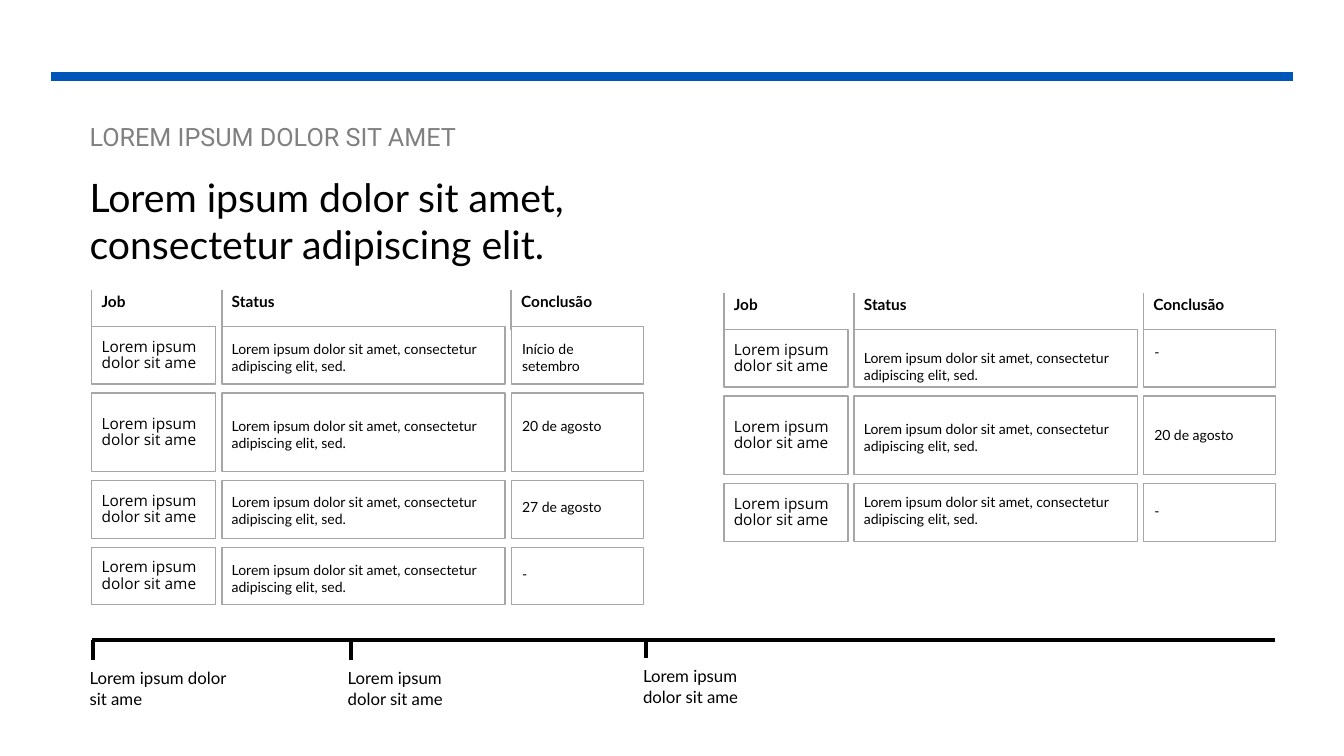
from lxml import etree
from pptx import Presentation
from pptx import util as u
from pptx.dml.color import RGBColor
from pptx.enum import shapes, text
from pptx.oxml import ns

BLUE = RGBColor(0x00, 0x55, 0xB8)
BLACK = RGBColor(0x00, 0x00, 0x00)
GRAY = RGBColor(0x80, 0x80, 0x80)
BORDER = RGBColor(0xA6, 0xA6, 0xA6)

JOB = "Lorem ipsum dolor sit ame"
STATUS = "Lorem ipsum dolor sit amet, consectetur adipiscing elit, sed."
COLUMNS = [("Job", 0, 1.23, 0.8), ("Status", 1.29, 2.81, 0.8), ("Conclusão", 4.16, 1.31, 1.01)]
ROW_GAP = 0.09
LEFT_ROWS = [
    (0.57, 0.09, "Início de setembro", 0.09),
    (0.78, 0.19, "20 de agosto", 0.19),
    (0.57, 0.08, "27 de agosto", 0.13),
    (0.57, 0.09, "-", 0.13),
]
RIGHT_ROWS = [
    (0.57, 0.15, "-", 0.09),
    (0.78, 0.19, "20 de agosto", 0.25),
    (0.57, 0.05, "-", 0.14),
]
MILESTONES = [(0.92, 6.35, 0.79, 1.68), (3.48, 6.35, 3.35, 1.45), (6.41, 6.33, 6.28, 1.36)]


class SlideBuilder:
    """Draws styled elements on the current slide."""

    formats = {
        "kicker": {"size": u.Pt(18), "name": "Roboto"},
        "title": {"size": u.Pt(28), "name": "Lato"},
        "header": {"size": u.Pt(11), "name": "Lato", "bold": True},
        "job": {"size": u.Pt(11), "name": "Open Sans"},
        "cell": {"size": u.Pt(10), "name": "Lato"},
        "milestone": {"size": u.Pt(12), "name": "Lato"},
    }

    def __init__(self, slide):
        self.slide = slide

    def fill_text(self, shape, words, style, color=BLACK):
        shape.text_frame.word_wrap = True
        paragraph = shape.text_frame.paragraphs[0]
        paragraph.text = words
        paragraph.alignment = text.PP_ALIGN.LEFT
        for name, value in self.formats[style].items():
            setattr(paragraph.font, name, value)
        paragraph.font.color.rgb = color
        return paragraph

    def label(self, left, top, width, height, words, style, color=BLACK):
        shape = self.slide.shapes.add_textbox(*map(u.Inches, (left, top, width, height)))
        self.fill_text(shape, words, style, color)
        shape.text_frame.auto_size = text.MSO_AUTO_SIZE.SHAPE_TO_FIT_TEXT

    def box(self, left, top, width, height, kind=shapes.MSO_SHAPE.RECTANGLE):
        shape = self.slide.shapes.add_shape(kind, *map(u.Inches, (left, top, width, height)))
        shape.shadow.inherit = False
        shape.fill.background()
        shape.line.color.rgb = BORDER
        shape.line.width = u.Pt(1)
        return shape

    def job_box(self, left, top, width, height):
        shape = self.box(left, top, width, height, shapes.MSO_SHAPE.ROUNDED_RECTANGLE)
        shape.adjustments[0] = 0
        shape.text_frame.vertical_anchor = text.MSO_ANCHOR.MIDDLE
        self.fill_text(shape, JOB, "job").line_spacing = 0.9

    def line(self, x1, y1, x2, y2, color, weight):
        connector = self.slide.shapes.add_connector(
            shapes.MSO_CONNECTOR.STRAIGHT, *map(u.Inches, (x1, y1, x2, y2)))
        connector.line.color.rgb = color
        connector.line.width = u.Pt(weight)
        etree.SubElement(connector._element.spPr, ns.qn("a:effectLst"))

    def job_grid(self, left, top, rows):
        for words, offset, _, width in COLUMNS:
            x = left + offset
            self.label(x, top, width, 0.29, words, "header")
            self.line(x, top + 0.42, x, top + 0.03, BORDER, 1)
        (job_x, job_width), (status_x, status_width), (date_x, date_width) = [
            (left + offset, width) for _, offset, width, _ in COLUMNS]
        y = top + 0.39
        for height, status_drop, date, date_drop in rows:
            self.job_box(job_x, y, job_width, height)
            self.box(status_x, y, status_width, height)
            self.box(date_x, y, date_width, height)
            self.label(status_x, y + status_drop, 2.77, 0.44, STATUS, "cell")
            date_height = 0.44 if len(date) > 12 else 0.27
            self.label(date_x + 0.01, y + date_drop, 1.2, date_height, date, "cell")
            y += height + ROW_GAP

    def timeline(self):
        self.line(12.65, 6.35, 0.91, 6.35, BLACK, 3)
        for x, y, label_left, label_width in MILESTONES:
            self.line(x, y, x, y + 0.2, BLACK, 3)
            self.label(label_left, y + 0.23, label_width, 0.5, JOB, "milestone")


def main():
    presentation = Presentation()
    presentation.slide_width = u.Inches(13.33)
    presentation.slide_height = u.Inches(7.5)
    builder = SlideBuilder(presentation.slides.add_slide(presentation.slide_layouts[6]))
    builder.line(12.82, 0.76, 0.51, 0.76, BLUE, 6)
    builder.label(0.79, 1.15, 5.87, 0.4, "LOREM IPSUM DOLOR SIT AMET", "kicker", GRAY)
    builder.label(0.79, 1.67, 6.15, 1.04,
                  "Lorem ipsum dolor sit amet, consectetur adipiscing elit.", "title")
    builder.job_grid(0.91, 2.85, LEFT_ROWS)
    builder.job_grid(7.18, 2.88, RIGHT_ROWS)
    builder.timeline()
    presentation.save("out.pptx")


if __name__ == "__main__":
    main()
